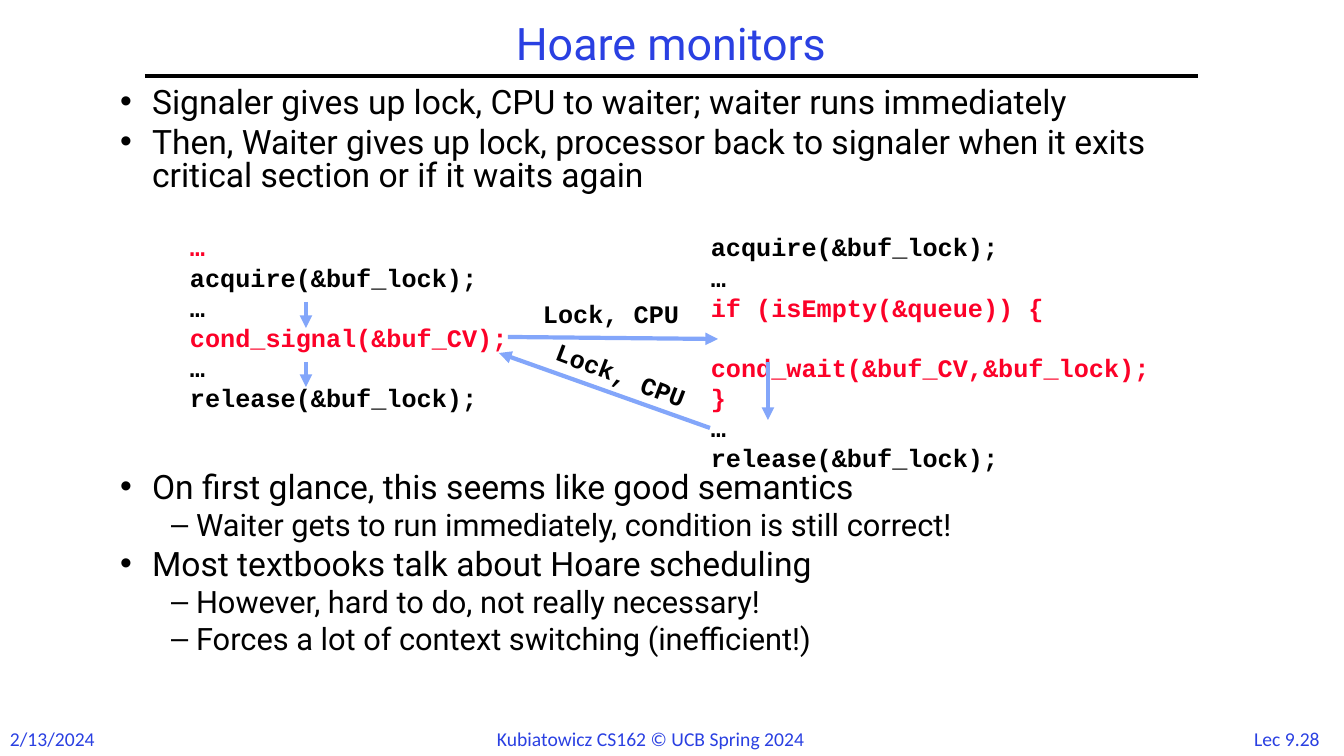
from dataclasses import dataclass

from lxml.etree import SubElement
from pptx import Presentation
from pptx.dml.color import RGBColor
from pptx.enum.shapes import MSO_CONNECTOR
from pptx.enum.text import MSO_ANCHOR, MSO_AUTO_SIZE, PP_ALIGN
from pptx.oxml.ns import qn
from pptx.util import Emu, Pt

EMU_PER_PX = 914400 / 100.8


def px(n):
    return Emu(round(n * EMU_PER_PX))


@dataclass(frozen=True)
class Theme:
    blue: str = "2A40E2"
    black: str = "000000"
    red: str = "FC0128"
    arrow: str = "83A6FA"
    sans: str = "Roboto"
    mono: str = "Courier New"
    small: str = "Calibri"
    title_size: int = 32
    list_sizes: tuple = (24, 22)
    list_indents: tuple = ((32, -32), (76, -25))  # left margin, first line
    code_size: int = 18
    code_pitch: float = 21.5
    footer_size: int = 14
    line_width: int = 3


class SlideBuilder:
    def __init__(self, prs, theme):
        self.theme = theme
        self.s = prs.slides.add_slide(prs.slide_layouts[1])

    def place(self, sp, box):
        sp.left, sp.top, sp.width, sp.height = map(px, box)

    def add_run(self, p, text, font, size, color, bold=False):
        r = p.add_run()
        r.text = text
        r.font.name, r.font.size, r.font.bold = font, Pt(size), bold
        r.font.color.rgb = RGBColor.from_string(color)

    def paragraphs(self, tf, items):
        """Pair each item with a paragraph, the first one being already there."""
        for i, item in enumerate(items):
            yield (tf.add_paragraph() if i else tf.paragraphs[0]), item

    def title(self, text, box):
        sp = self.s.shapes.title
        self.place(sp, box)
        tf = sp.text_frame
        tf.auto_size = MSO_AUTO_SIZE.NONE
        tf.vertical_anchor = MSO_ANCHOR.MIDDLE
        p = tf.paragraphs[0]
        p.alignment, p.line_spacing = PP_ALIGN.CENTER, 0.9
        self.add_run(p, text, self.theme.sans, self.theme.title_size, self.theme.blue)

    def bullets(self, items, box):
        """Each item is (level, space before in points or None, text)."""
        t = self.theme
        sp = self.s.placeholders[1]
        self.place(sp, box)
        tf = sp.text_frame
        tf.auto_size = MSO_AUTO_SIZE.NONE
        for p, (level, gap, text) in self.paragraphs(tf, items):
            size = t.list_sizes[level]
            p.level, p.line_spacing = level, 0.8
            p.space_before = Pt(gap or round(size * 0.235, 1))
            margin, first = t.list_indents[level]
            pPr = p._p.get_or_add_pPr()
            pPr.set("marL", str(px(margin)))
            pPr.set("indent", str(px(first)))
            self.add_run(p, text, t.sans, size, t.black)

    def text_box(self, box, wrap=True):
        sp = self.s.shapes.add_textbox(*map(px, box))
        sp.text_frame.word_wrap = wrap
        return sp

    def code(self, lines, box, rotation=0):
        """Each line is (text, colour, number of blank lines above)."""
        t = self.theme
        sp = self.text_box(box)
        sp.rotation = rotation
        for p, (text, color, blank) in self.paragraphs(sp.text_frame, lines):
            p.line_spacing = Pt(t.code_pitch)
            p.space_before = Pt(blank * t.code_pitch)
            self.add_run(p, text, t.mono, t.code_size, color, bold=True)

    def footer(self, text, box, align=PP_ALIGN.LEFT):
        p = self.text_box(box, wrap=False).text_frame.paragraphs[0]
        p.alignment = align
        self.add_run(p, text, self.theme.small, self.theme.footer_size, self.theme.blue)

    def line(self, start, end, color, arrow=False):
        c = self.s.shapes.add_connector(
            MSO_CONNECTOR.STRAIGHT, *map(px, (*start, *end)))
        c.line.color.rgb = RGBColor.from_string(color)
        c.line.width = Pt(self.theme.line_width)
        if arrow:
            SubElement(c.line._get_or_add_ln(), qn("a:tailEnd"), type="triangle")
        SubElement(c._element.spPr, qn("a:effectLst"))


def main():
    prs = Presentation()
    prs.slide_width, prs.slide_height = px(1344), px(756)
    t = Theme()
    b = SlideBuilder(prs, t)

    b.footer("Lec 9.28", (1238, 722, 98, 34), PP_ALIGN.CENTER)
    b.footer("2/13/2024", (0, 722, 108, 34))
    b.footer("Kubiatowicz CS162 © UCB Spring 2024", (487, 722, 371, 34))
    b.line((145, 76), (1198, 76), t.black)

    b.title("Hoare monitors", (145, 17, 1052, 58))
    b.bullets([
        (0, None, "Signaler gives up lock, CPU to waiter; waiter runs immediately"),
        (0, None, "Then, Waiter gives up lock, processor back to signaler when it "
                  "exits critical section or if it waits again"),
        (0, 200, "On first glance, this seems like good semantics"),
        (1, None, "Waiter gets to run immediately, condition is still correct!"),
        (0, None, "Most textbooks talk about Hoare scheduling"),
        (1, None, "However, hard to do, not really necessary!"),
        (1, None, "Forces a lot of context switching (inefficient!)"),
    ], (110, 84, 1092, 630))

    b.code([
        ("acquire(&buf_lock);", t.black, 0),
        ("…", t.black, 0),
        ("if (isEmpty(&queue)) {", t.red, 0),
        ("cond_wait(&buf_CV,&buf_lock);", t.red, 1),
        ("}", t.red, 0),
        ("…", t.black, 0),
        ("release(&buf_lock);", t.black, 0),
    ], (701, 227, 487, 224))
    b.code([
        ("…", t.red, 0),
        ("acquire(&buf_lock);", t.black, 0),
        ("…", t.black, 0),
        ("cond_signal(&buf_CV);", t.red, 0),
        ("…", t.black, 0),
        ("release(&buf_lock);", t.black, 0),
    ], (180, 227, 386, 194))

    handover = [("Lock, CPU", t.black, 0)]
    b.code(handover, (533, 294, 168, 40))
    b.code(handover, (543, 355, 158, 40), rotation=20.8)

    for start, end in (
        ((508, 337), (718, 339)),  # signaler to waiter
        ((710, 428), (499, 353)),  # waiter back to signaler
        ((306, 302), (306, 328)),
        ((768, 362), (768, 420)),
        ((306, 362), (306, 387)),
    ):
        b.line(start, end, t.arrow, arrow=True)

    prs.save("out.pptx")


if __name__ == "__main__":
    main()
